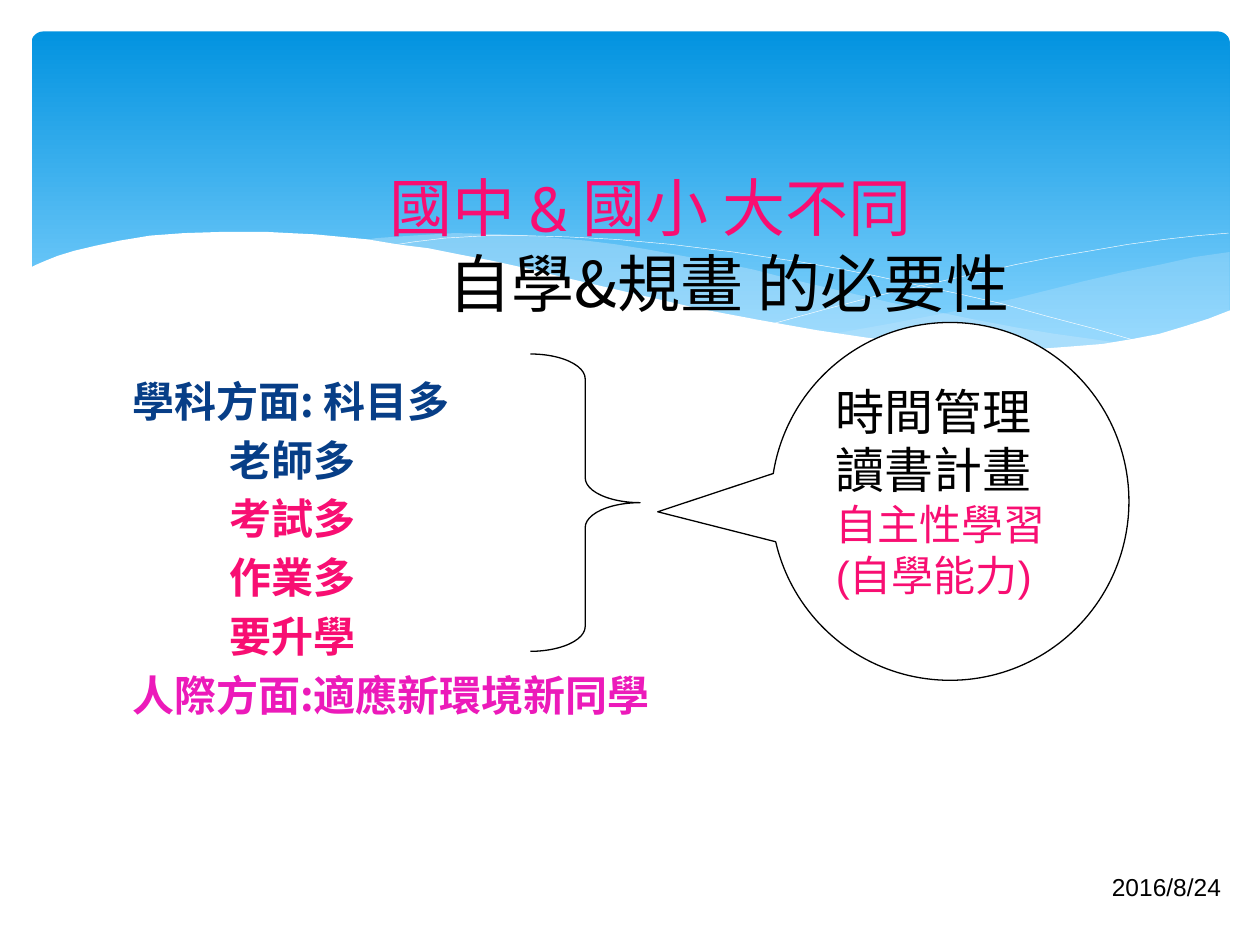
from dataclasses import dataclass

from lxml import etree
from pptx import Presentation
from pptx import util as u
from pptx.dml.color import RGBColor
from pptx.enum import shapes, text
from pptx.oxml import ns


@dataclass(frozen=True)
class Theme:
    sky: str = "0293E0"
    pale_sky: str = "83D3FE"
    mist: str = "C6E7FC"
    white: str = "FFFFFF"
    black: str = "000000"
    navy: str = "073E87"
    pink: str = "F80E72"
    violet: str = "EC1ABA"
    cjk: str = "Noto Sans CJK SC"
    heading: str = "Cabin"
    plain: str = "Arial"
    title_size: int = 36
    large: int = 28
    body_size: int = 24
    date_size: int = 14


THEME = Theme()

# Wave outlines, in inches from the corner of the page
RIGHT_WAVE = [
    (9.76, 2), (9.48, 2.04), (9.21, 2.1), (8.91, 2.16), (8.61, 2.23), (8.05, 2.37),
    (7.53, 2.48), (7.06, 2.57), (6.61, 2.65), (6.91, 2.69), (7.19, 2.72), (7.45, 2.75),
    (7.69, 2.77), (8.03, 2.78), (8.35, 2.77), (8.63, 2.75), (8.89, 2.72), (9.13, 2.67),
    (9.35, 2.62), (9.49, 2.57), (9.63, 2.52), (9.76, 2.47)]
MIDDLE_WAVE = [
    (8.93, 2.73), (8.66, 2.69), (8.37, 2.65), (8.07, 2.6), (7.75, 2.54), (7.41, 2.47),
    (7.06, 2.4), (6.68, 2.31), (6.29, 2.22), (5.98, 2.14), (5.69, 2.08), (5.41, 2.03),
    (5.14, 1.98), (4.89, 1.94), (4.65, 1.91), (4.42, 1.89), (4.2, 1.87), (3.99, 1.86),
    (3.61, 1.85), (3.28, 1.87), (2.99, 1.89), (2.86, 1.91), (3.23, 1.96), (3.62, 2.03),
    (4.04, 2.11), (4.49, 2.22), (4.91, 2.32), (5.3, 2.4), (5.66, 2.48), (6.01, 2.55),
    (6.34, 2.61), (6.65, 2.66), (6.95, 2.7), (7.22, 2.74), (7.48, 2.76), (7.73, 2.77),
    (7.96, 2.78), (8.28, 2.78), (8.57, 2.77), (8.76, 2.75)]
LONG_LINE = [
    (3.09, 1.95), (3.28, 1.92), (3.53, 1.89), (3.87, 1.87), (4.16, 1.87), (4.5, 1.88),
    (4.89, 1.9), (5.33, 1.94), (5.82, 2), (6.08, 2.04), (6.36, 2.08), (6.65, 2.13),
    (6.95, 2.19), (7.27, 2.26), (7.6, 2.33), (7.95, 2.41), (8.31, 2.51), (8.69, 2.61),
    (9.07, 2.72)]
SHORT_LINE = [
    (6.13, 2.57), (6.53, 2.46), (6.95, 2.35), (7.48, 2.23), (8.06, 2.1), (8.36, 2.04),
    (8.66, 1.99), (8.95, 1.94), (9.24, 1.9), (9.51, 1.87), (9.75, 1.85)]
WHITE_WAVE = [
    (9.77, 2.46), (9.59, 2.53), (9.4, 2.59), (9.2, 2.65), (8.99, 2.69), (8.75, 2.73),
    (8.5, 2.75), (8.23, 2.77), (7.93, 2.76), (7.61, 2.75), (7.26, 2.72), (6.88, 2.68),
    (6.48, 2.62), (6.03, 2.54), (5.55, 2.45), (5.03, 2.33), (4.47, 2.2), (4.18, 2.13),
    (3.91, 2.07), (3.65, 2.02), (3.4, 1.97), (3.16, 1.94), (2.92, 1.9), (2.71, 1.88),
    (2.5, 1.86), (2.3, 1.85), (2.11, 1.84), (1.77, 1.84), (1.46, 1.85), (1.19, 1.87),
    (0.95, 1.91), (0.76, 1.95), (0.59, 1.99), (0.46, 2.03), (0.36, 2.07), (0.29, 2.1),
    (0.23, 2.13), (0.23, 3.29), (9.77, 3.29)]


def color(value):
    return RGBColor.from_string(value)


def inches(*values):
    return [u.Inches(value) for value in values]


def paint(shape, fill=None, opacity=100, line=None, width=0.75):
    """Give a shape its fill and line, and no shadow."""
    shape.shadow.inherit = False
    if fill:
        shape.fill.solid()
        shape.fill.fore_color.rgb = color(fill)
        if opacity < 100:
            tint = shape._element.spPr.find(".//" + ns.qn("a:srgbClr"))
            etree.SubElement(tint, ns.qn("a:alpha"), val=str(opacity * 1000))
    else:
        shape.fill.background()
    if line:
        shape.line.color.rgb = color(line)
        shape.line.width = u.Pt(width)
    else:
        shape.line.fill.background()


def write(frame, words, size=THEME.body_size, ink=THEME.black, font=THEME.cjk,
          bold=False, align=text.PP_ALIGN.LEFT, indent=0, before=0):
    """Add one formatted paragraph, filling the first one if it is still empty."""
    para = frame.paragraphs[0] if not frame.text else frame.add_paragraph()
    para.alignment = align
    para.line_spacing = u.Pt(size * 1.2)
    para.space_before = u.Pt(before)
    para._p.get_or_add_pPr().set("marL", str(u.Inches(indent)))
    span = para.add_run()
    span.text = words
    span.font.size, span.font.bold, span.font.name = u.Pt(size), bold, font
    span.font.color.rgb = color(ink)
    etree.SubElement(span._r.get_or_add_rPr(), ns.qn("a:ea"), typeface=THEME.cjk)


def add_outline(page, origin, points, closed=True):
    left, top = origin
    places = [inches(left + x, top + y) for x, y in points]
    builder = page.shapes.build_freeform(*places[0])
    builder.add_line_segments(places[1:], close=closed)
    return builder.convert_to_shape()


def add_backdrop(page, box):
    left, top, width, _ = box
    # Blue panel
    panel = page.shapes.add_shape(shapes.MSO_SHAPE.ROUNDED_RECTANGLE,
                                  *inches(left + 0.25, top + 0.25, width - 0.49, 2.7))
    panel.adjustments[0] = 0.034
    paint(panel)
    panel.fill.gradient()
    panel.fill.gradient_angle = 270
    stops = ((0, THEME.sky), (0.9, THEME.pale_sky))
    for stop, (position, tint) in zip(panel.fill.gradient_stops, stops):
        stop.position = position
        stop.color.rgb = color(tint)
    # Waves and thin lines
    origin = (left, top)
    for points, opacity in ((RIGHT_WAVE, 29), (MIDDLE_WAVE, 40)):
        paint(add_outline(page, origin, points), fill=THEME.mist, opacity=opacity)
    for points in (LONG_LINE, SHORT_LINE):
        paint(add_outline(page, origin, points, closed=False),
              line=THEME.white, width=0.25)
    paint(add_outline(page, origin, WHITE_WAVE), fill=THEME.white)


def add_title(page, box):
    title = page.shapes.title
    page.shapes._spTree.append(title._element)  # in front of the backdrop
    title.left, title.top, title.width, title.height = inches(*box)
    frame = title.text_frame
    frame.auto_size = text.MSO_AUTO_SIZE.NONE
    frame.vertical_anchor = text.MSO_ANCHOR.TOP
    frame.margin_top = u.Inches(0.35)
    style = dict(size=THEME.title_size, align=text.PP_ALIGN.CENTER)
    write(frame, "國中 & 國小 大不同", ink=THEME.pink, font=THEME.heading, **style)
    write(frame, "自學&規畫 的必要性", indent=1.24, **style)


def add_text_box(page, box):
    frame = page.shapes.add_textbox(*inches(*box)).text_frame
    frame.word_wrap = True
    return frame


def add_differences(page, box):
    frame = add_text_box(page, box)
    lines = (("學科方面: 科目多", THEME.navy, 0), ("老師多", THEME.navy, 0.77),
             ("考試多", THEME.pink, 0.77), ("作業多", THEME.pink, 0.77),
             ("要升學", THEME.pink, 0.77), ("人際方面:適應新環境新同學", THEME.violet, 0))
    for words, ink, indent in lines:
        write(frame, words, ink=ink, indent=indent, bold=True, before=4.8)


def add_callout(page, box):
    callout = page.shapes.add_shape(shapes.MSO_SHAPE.OVAL_CALLOUT, *inches(*box))
    callout.adjustments[0], callout.adjustments[1] = -0.817, 0.029
    paint(callout, fill=THEME.white, line=THEME.black)
    frame = callout.text_frame
    frame.word_wrap = True
    frame.vertical_anchor = text.MSO_ANCHOR.TOP
    for words in ("時間管理", "讀書計畫"):
        write(frame, words, size=THEME.large, font=THEME.plain)
    write(frame, "自主性學習(自學能力)", ink=THEME.pink, font=THEME.plain)


def add_brace(page, box):
    brace = page.shapes.add_shape(shapes.MSO_SHAPE.RIGHT_BRACE, *inches(*box))
    brace.adjustments[0], brace.adjustments[1] = 0.227, 0.5
    paint(brace, line=THEME.black)


def add_date(page, box):
    frame = add_text_box(page, box)
    frame.vertical_anchor = text.MSO_ANCHOR.MIDDLE
    write(frame, "2016/8/24", size=THEME.date_size, font=THEME.plain,
          align=text.PP_ALIGN.RIGHT)


def main():
    deck = Presentation()
    deck.slide_width, deck.slide_height = inches(10, 7.5)
    page = deck.slides.add_slide(deck.slide_layouts[5])
    add_backdrop(page, (0, 0, 10, 7.5))
    add_date(page, (5.65, 6.84, 4.14, 0.4))
    add_title(page, (0.83, 0.99, 8.67, 1.25))
    add_differences(page, (0.95, 2.93, 8.1, 3.77))
    add_callout(page, (6.12, 2.56, 2.84, 2.84))
    add_brace(page, (4.21, 2.81, 0.87, 2.36))
    deck.save("out.pptx")


if __name__ == "__main__":
    main()
